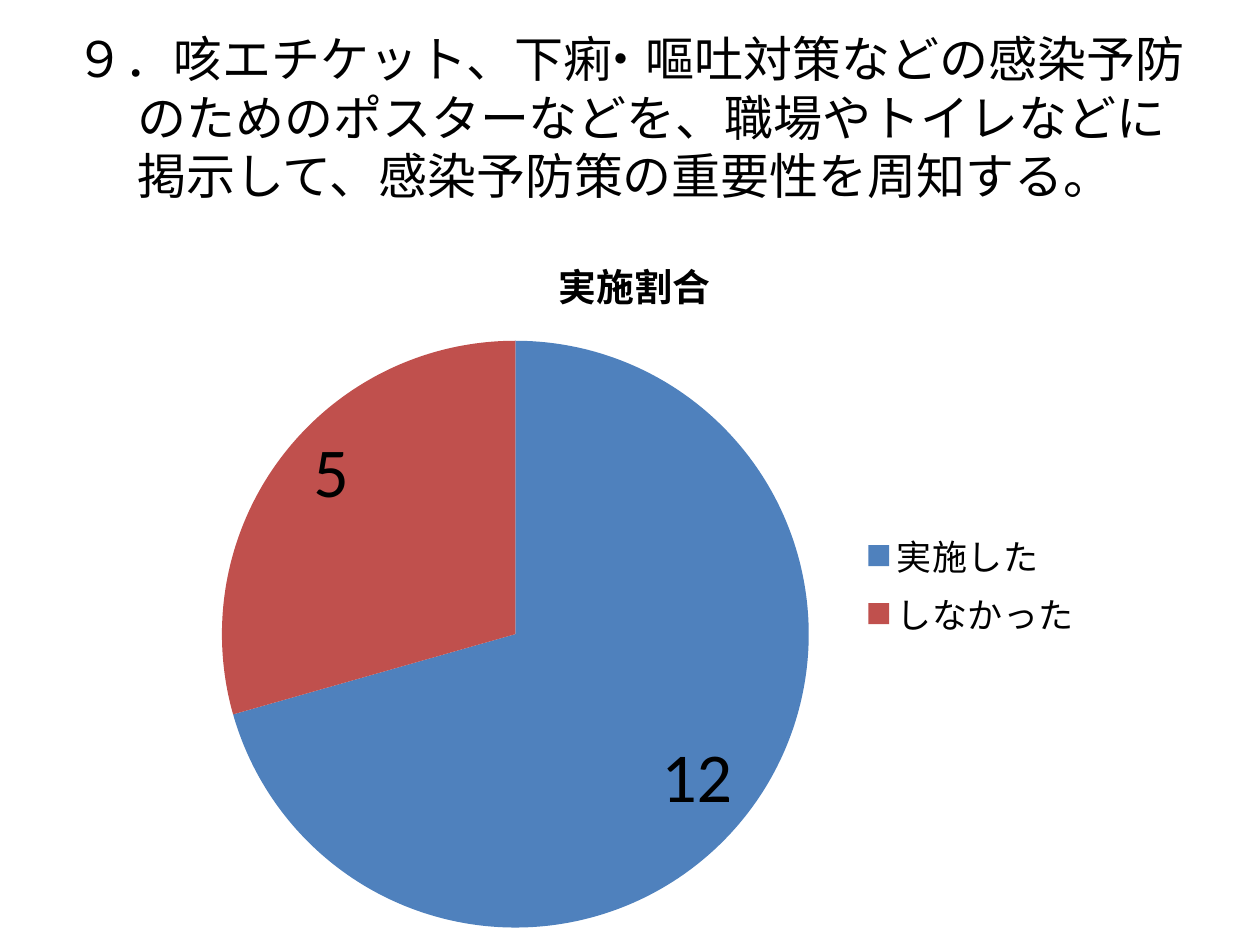
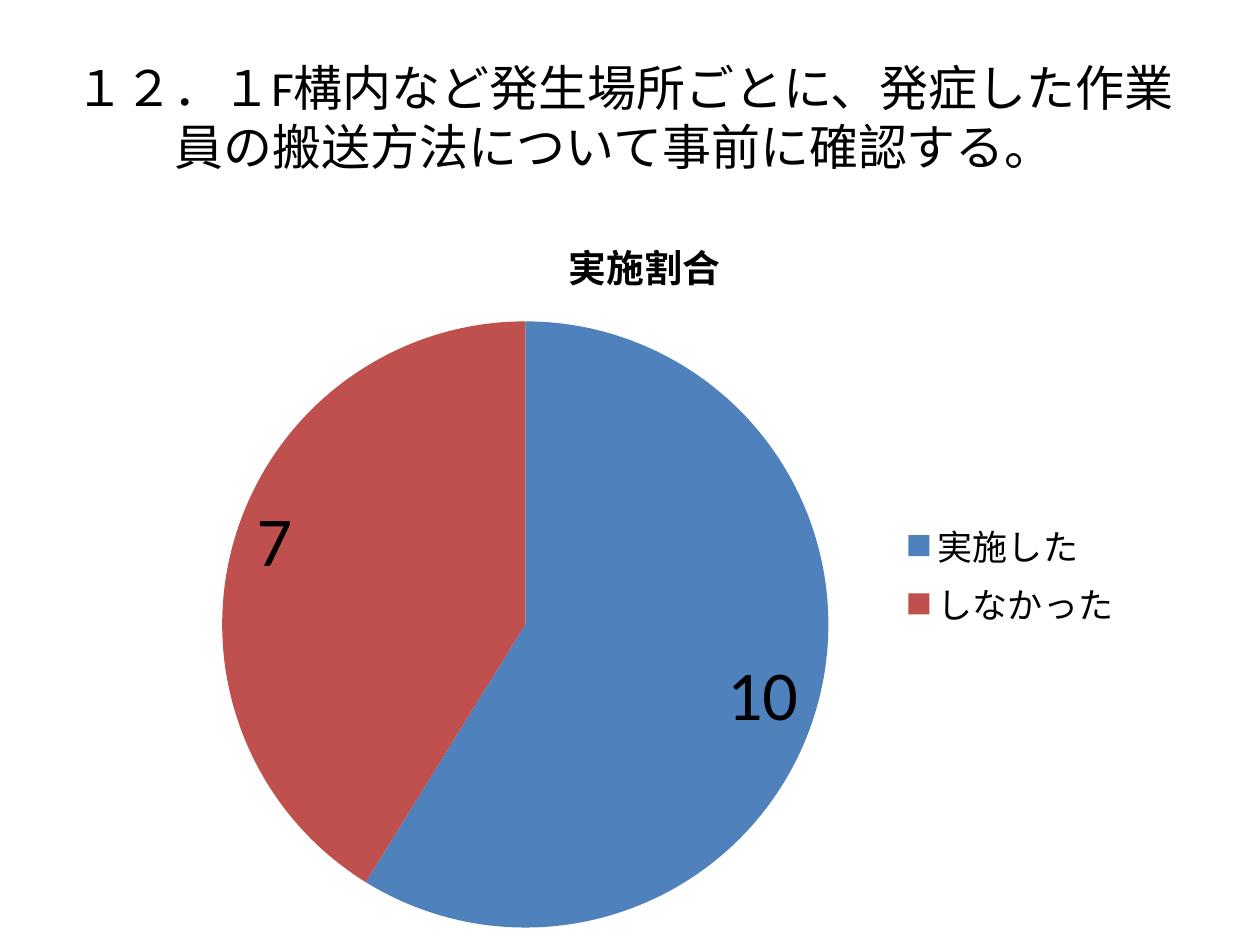
from dataclasses import dataclass

from pptx import Presentation
from pptx.chart.data import CategoryChartData
from pptx.dml.color import RGBColor
from pptx.enum.chart import XL_CHART_TYPE as ChartType
from pptx.enum.chart import XL_LABEL_POSITION as LabelPosition
from pptx.enum.chart import XL_LEGEND_POSITION as LegendPosition
from pptx.enum.text import MSO_ANCHOR, MSO_AUTO_SIZE, PP_ALIGN
from pptx.util import Pt


@dataclass(frozen=True)
class Theme:
    font: str = "Calibri"
    ink: RGBColor = RGBColor(0x00, 0x00, 0x00)
    slices: tuple = (RGBColor(0x4F, 0x81, 0xBD), RGBColor(0xC0, 0x50, 0x4D))
    heading: float = 28
    chart_text: float = 18
    chart_title: float = 21.6
    legend: float = 20
    value: float = 40
    tight_spacing: int = -915  # hundredths of a point


theme = Theme()

# Shared wording and one entry for each survey question
CHART_TITLE = "実施割合"
ANSWERS = ("実施した", "しなかった")
TITLE_BOX = (36, 21.6, 648, 90)
questions = [
    {
        "heading": "９．咳エチケット、下痢・嘔吐対策などの感染予防のためのポスターなどを、"
                   "職場やトイレなどに掲示して、感染予防策の重要性を周知する。",
        "tight": "痢・",
        "hanging": 35.4,
        "chart_box": (99.4, 128.2, 527, 411.8),
        "counts": (12, 5),
    },
    {
        "heading": "１２．１F構内など発生場所ごとに、発症した作業員の搬送方法について"
                   "事前に確認する。",
        "tight": "",
        "hanging": 56.5,
        "chart_box": (87.8, 116.9, 561.6, 423.1),
        "counts": (10, 7),
    },
]


def style_font(font, size, bold=False):
    font.name = theme.font
    font.size = Pt(size)
    font.bold = bold
    font.color.rgb = theme.ink


def write_text(frame, text, size, bold=False, align=None, hanging=0, tight=""):
    para = frame.paragraphs[0]
    # Letters around the middle dot are set closer together
    pieces = text.partition(tight) if tight else (text,)
    for piece in pieces:
        span = para.add_run()
        span.text = piece
        style_font(span.font, size, bold)
        if piece == tight:
            span._r.get_or_add_rPr().set("spc", str(theme.tight_spacing))
    if align is not None:
        para.alignment = align
    if hanging:
        properties = para._p.get_or_add_pPr()
        properties.set("marL", str(Pt(hanging)))
        properties.set("indent", str(-Pt(hanging)))


deck = Presentation()
deck.slide_width, deck.slide_height = Pt(720), Pt(540)
title_only = deck.slide_layouts[5]

for question in questions:
    page = deck.slides.add_slide(title_only)

    # Question with a hanging number
    box = page.shapes.title
    box.left, box.top, box.width, box.height = map(Pt, TITLE_BOX)
    frame = box.text_frame
    frame.word_wrap = True
    frame.auto_size = MSO_AUTO_SIZE.NONE
    frame.vertical_anchor = MSO_ANCHOR.MIDDLE
    write_text(frame, question["heading"], theme.heading, align=PP_ALIGN.LEFT,
               hanging=question["hanging"], tight=question["tight"])

    # Pie of the answers
    answers = CategoryChartData()
    answers.categories = ANSWERS
    answers.add_series(CHART_TITLE, question["counts"])
    chart = page.shapes.add_chart(
        ChartType.PIE, *map(Pt, question["chart_box"]), answers).chart
    style_font(chart.font, theme.chart_text)
    chart.has_title = True
    write_text(chart.chart_title.text_frame, CHART_TITLE, theme.chart_title, bold=True)
    chart.chart_title.include_in_layout = False

    # Legend on the right
    chart.has_legend = True
    chart.legend.position = LegendPosition.RIGHT
    chart.legend.include_in_layout = False
    style_font(chart.legend.font, theme.legend)

    # Slice colours and counts
    pie = chart.plots[0]
    pie.vary_by_categories = True
    for index, colour in enumerate(theme.slices):
        fill = pie.series[0].points[index].format.fill
        fill.solid()
        fill.fore_color.rgb = colour
    pie.has_data_labels = True
    labels = pie.data_labels
    labels.show_value = True
    labels.show_percentage = False
    labels.position = LabelPosition.BEST_FIT
    style_font(labels.font, theme.value)

deck.save("out.pptx")
